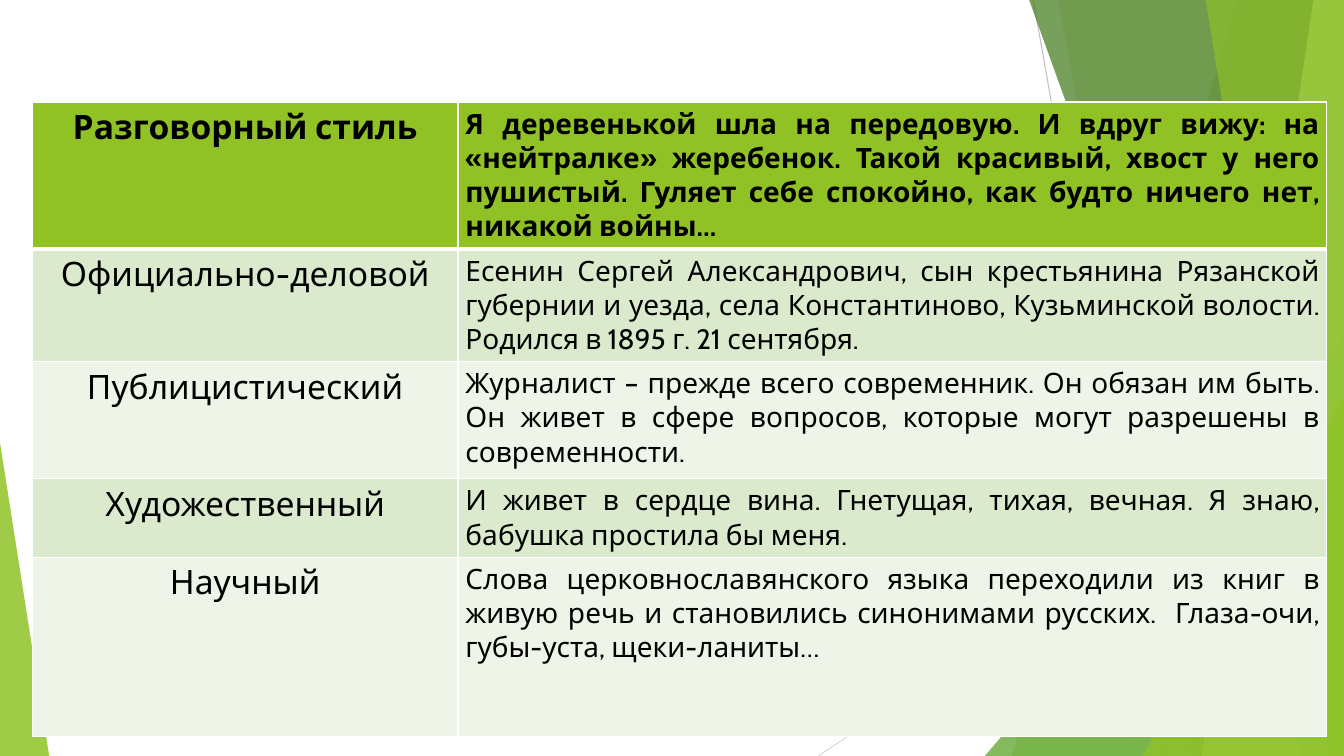
from lxml import etree
from pptx import Presentation
from pptx.dml.color import RGBColor
from pptx.enum.shapes import MSO_CONNECTOR, MSO_SHAPE
from pptx.enum.text import PP_ALIGN
from pptx.oxml.ns import qn
from pptx.util import Cm, Pt

STRAIGHT = MSO_CONNECTOR.STRAIGHT
TRIANGLE = MSO_SHAPE.ISOSCELES_TRIANGLE
CENTER, JUSTIFY = PP_ALIGN.CENTER, PP_ALIGN.JUSTIFY

COLORS = {
    "lime": "90C226", "green": "54A021", "forest": "3F7819", "pale": "C0E474",
    "band_dark": "DBE9CD", "band_light": "EEF4E8", "white": "FFFFFF",
    "black": "000000", "gray": "BFBFBF", "light_gray": "D9D9D9",
}
FONT = "Cabin"
SLIDE_W, SLIDE_H = 33.87, 19.05
WEDGE_TOP = -0.02

STYLES = [
    ("Разговорный стиль", "Я деревенькой шла на передовую. И вдруг вижу: на «нейтралке» жеребенок. Такой красивый, хвост у него пушистый. Гуляет себе спокойно, как будто ничего нет, никакой войны…"),
    ("Официально-деловой", "Есенин Сергей Александрович, сын крестьянина Рязанской губернии и уезда, села Константиново, Кузьминской волости. Родился в 1895 г. 21 сентября."),
    ("Публицистический", "Журналист – прежде всего современник. Он обязан им быть. Он живет в сфере вопросов, которые могут разрешены в современности."),
    ("Художественный", "И живет в сердце вина. Гнетущая, тихая, вечная. Я знаю, бабушка простила бы меня."),
    ("Научный", "Слова церковнославянского языка переходили из книг в живую речь и становились синонимами русских.  Глаза-очи, губы-уста, щеки-ланиты…"),
]
TABLE_LEFT, TABLE_TOP = 0.82, 2.57
COLUMN_WIDTHS = [10.72, 21.9]
ROW_HEIGHTS = [2.95, 2.26, 2.95, 1.8, 4.52]
COLUMN_FORMATS = [(24, CENTER), (20, JUSTIFY)]

RAYS = [
    ((26.04, 0), (29.41, SLIDE_H), "gray"),
    ((SLIDE_W, 10.24), (20.62, SLIDE_H), "light_gray"),
]
FACETS = [
    ("wedge", 31.19, 25.5, "lime", 30),
    ("wedge", 26.67, 30.05, "lime", 20),
    ("triangle", (24.82, 8.46, 9.05), 1, "green", 72),
    ("wedge", 25.93, 32.79, "forest", 70),
    ("wedge", 33.1, 30.28, "pale", 70),
    ("wedge", 30.38, 33.48, "lime", 65),
    ("triangle", (28.8, 9.98, 5.07), 1, "lime", 80),
    ("triangle", (0, 11.15, 1.24), 0, "lime", 85),
]


def rgb(name):
    return RGBColor.from_string(COLORS[name])


def add_ray(slide, start, end, color):
    ray = slide.shapes.add_connector(STRAIGHT, *(Cm(v) for v in start + end))
    ray.line.color.rgb = rgb(color)
    ray.line.width = Pt(0.75)
    etree.SubElement(ray._element.spPr, qn("a:effectLst"))


def add_wedge(slide, top_x, bottom_x):
    corners = [(SLIDE_W, WEDGE_TOP), (SLIDE_W, SLIDE_H), (bottom_x, SLIDE_H)]
    outline = slide.shapes.build_freeform(Cm(top_x), Cm(WEDGE_TOP))
    outline.add_line_segments([(Cm(x), Cm(y)) for x, y in corners], close=True)
    return outline.convert_to_shape()


def add_triangle(slide, place, apex):
    left, top, width = place
    triangle = slide.shapes.add_shape(
        TRIANGLE, Cm(left), Cm(top), Cm(width), Cm(SLIDE_H - top))
    triangle.adjustments[0] = apex
    return triangle


def paint_facet(facet, color, opacity):
    facet.shadow.inherit = False
    facet.line.fill.background()
    facet.fill.solid()
    facet.fill.fore_color.rgb = rgb(color)
    tint = facet._element.spPr.find(qn("a:solidFill"))[0]
    etree.SubElement(tint, qn("a:alpha"), val=str(opacity * 1000))


def add_borders(cell, widths):
    properties = cell._tc.get_or_add_tcPr()
    for side, width in widths.items():
        border = etree.SubElement(properties, qn(f"a:ln{side}"), w=str(Pt(width)))
        solid = etree.SubElement(border, qn("a:solidFill"))
        etree.SubElement(solid, qn("a:srgbClr"), val=COLORS["white"])


def fill_cell(cell, words, row, column):
    size, alignment = COLUMN_FORMATS[column]
    cell.margin_left = cell.margin_right = Cm(0.19)
    cell.margin_top = cell.margin_bottom = Cm(0.13)
    add_borders(cell, {"L": 1, "R": 1, "T": 3 if row == 1 else 1, "B": 3 if row == 0 else 1})
    band = "band_dark" if row % 2 else "band_light"
    cell.fill.solid()
    cell.fill.fore_color.rgb = rgb("lime" if row == 0 else band)
    paragraph = cell.text_frame.paragraphs[0]
    paragraph.alignment = alignment
    run = paragraph.add_run()
    run.text = words
    run.font.name = FONT
    run.font.size = Pt(size)
    run.font.bold = row == 0
    run.font.color.rgb = rgb("black")


def add_styles_table(slide):
    table = slide.shapes.add_table(
        len(STYLES), len(COLUMN_WIDTHS), Cm(TABLE_LEFT), Cm(TABLE_TOP),
        Cm(sum(COLUMN_WIDTHS)), Cm(sum(ROW_HEIGHTS))).table
    for column, width in zip(table.columns, COLUMN_WIDTHS):
        column.width = Cm(width)
    for row, height in zip(table.rows, ROW_HEIGHTS):
        row.height = Cm(height)
    for row, entry in enumerate(STYLES):
        for column, words in enumerate(entry):
            fill_cell(table.cell(row, column), words, row, column)


def main():
    deck = Presentation()
    deck.slide_width, deck.slide_height = Cm(SLIDE_W), Cm(SLIDE_H)
    slide = deck.slides.add_slide(deck.slide_layouts[6])
    for start, end, color in RAYS:
        add_ray(slide, start, end, color)
    builders = {"wedge": add_wedge, "triangle": add_triangle}
    for kind, first, second, color, opacity in FACETS:
        paint_facet(builders[kind](slide, first, second), color, opacity)
    add_styles_table(slide)
    deck.save("out.pptx")


if __name__ == "__main__":
    main()
